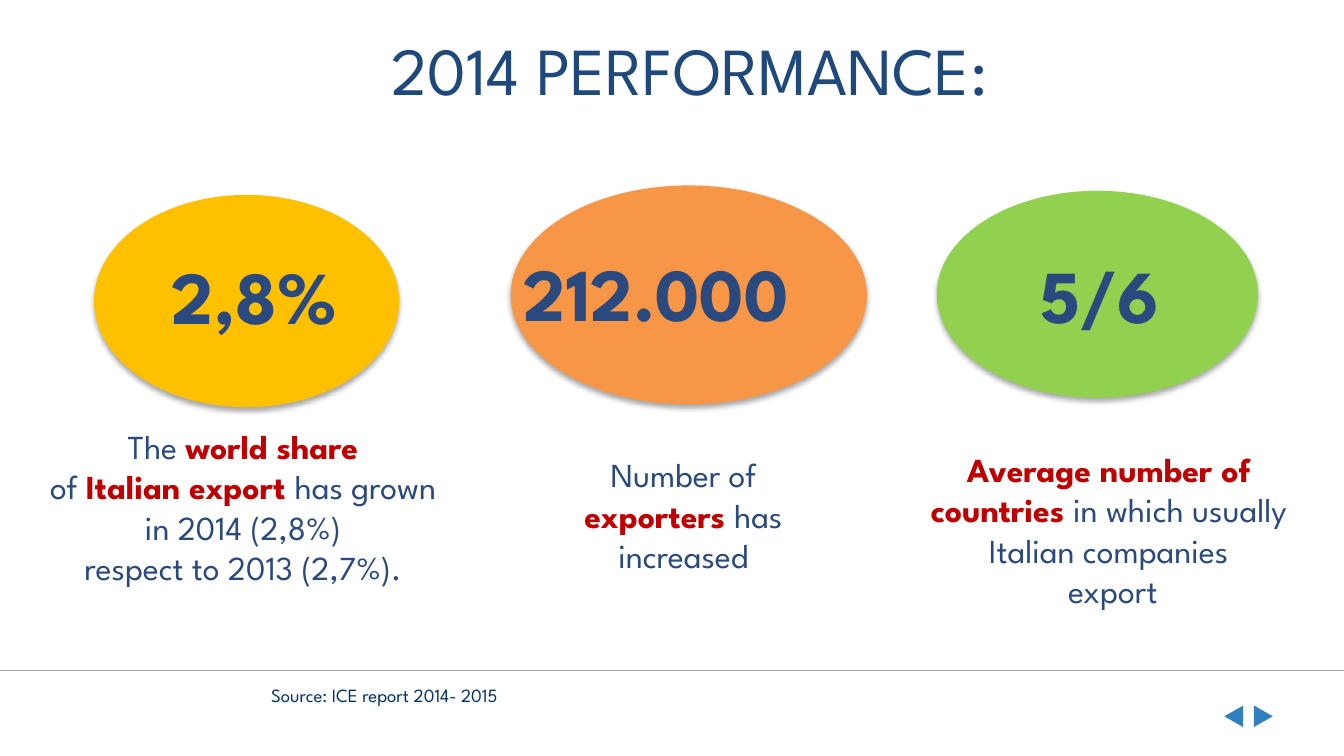
from lxml import etree
from pptx import Presentation
from pptx.dml.color import RGBColor
from pptx.enum import shapes, text
from pptx.oxml import ns
from pptx.util import Inches, Pt

FONT = "League Spartan"
NAVY = RGBColor(0x2A, 0x49, 0x7E)
TITLE = RGBColor(0x1F, 0x49, 0x7D)
DEEP = RGBColor(0x00, 0x33, 0x66)
RED = RGBColor(0xC0, 0x00, 0x00)
GOLD = RGBColor(0xFF, 0xC0, 0x00)
ORANGE = RGBColor(0xF7, 0x96, 0x46)
GREEN = RGBColor(0x92, 0xD0, 0x50)
BLUE = RGBColor(0x2E, 0x80, 0xBF)
GREY = RGBColor(0xA6, 0xA6, 0xA6)
LEFT, MID = text.PP_ALIGN.LEFT, text.PP_ALIGN.CENTER

# oval box, colour, figure, figure box, figure alignment, figure wrap
OVALS = [
    ((3.8, 1.38, 2.65, 1.63), ORANGE, "212.000", (3.8, 1.79, 2.72, 0.77), LEFT, True),
    ((6.97, 1.42, 2.39, 1.54), GREEN, "5/6 ", (7.63, 1.8, 1.25, 0.77), MID, False),
    ((0.7, 1.45, 2.27, 1.58), GOLD, "2,8%", (1.18, 1.81, 1.47, 0.77), LEFT, False),
]

# Caption box and paragraphs; each run is (words, is key phrase)
NOTES = [
    ((-0.08, 3.17, 3.84, 1.21), [
        [("The ", False), ("world share ", True)],
        [("of ", False), ("Italian export ", True), ("has grown ", False)],
        [("in 2014 (2,8%) ", False)],
        [("respect to 2013 (2,7%). ", False)],
    ]),
    ((4.06, 3.38, 2.05, 0.91), [
        [("Number of ", False), ("exporters ", True), ("has increased", False)],
    ]),
    ((6.88, 3.34, 2.74, 1.51), [
        [("Average number of countries ", True),
         ("in which usually Italian companies", False)],
        [(" export", False)],
    ]),
]


def place(box):
    return [Inches(n) for n in box]


def write(par, words, size, color, bold=False):
    run = par.add_run()
    run.text = words
    look = {"name": FONT, "size": Pt(size), "bold": bold}
    for key, val in look.items():
        setattr(run.font, key, val)
    run.font.color.rgb = color


def set_frame(frame, wrap=True, inset=None):
    look = {"word_wrap": wrap, "vertical_anchor": text.MSO_ANCHOR.TOP,
            "auto_size": text.MSO_AUTO_SIZE.SHAPE_TO_FIT_TEXT}
    if inset is not None:
        for side in ("left", "top", "right", "bottom"):
            look["margin_" + side] = Inches(inset)
    for key, val in look.items():
        setattr(frame, key, val)


def add_title(slide):
    title = slide.shapes.title
    title.left, title.top, title.width, title.height = place((0.78, 0.16, 8.7, 0.71))
    set_frame(title.text_frame)
    par = title.text_frame.paragraphs[0]
    par.alignment, par.line_spacing = MID, 1.0
    write(par, "2014 PERFORMANCE:", 36, TITLE)


def add_label(slide, box, words, size, color, align=LEFT, wrap=True, bold=False):
    frame = slide.shapes.add_textbox(*place(box)).text_frame
    set_frame(frame, wrap)
    par = frame.paragraphs[0]
    par.alignment = align
    write(par, words, size, color, bold)


def add_note(slide, box, pars):
    frame = slide.shapes.add_textbox(*place(box)).text_frame
    set_frame(frame, inset=0)
    for i, runs in enumerate(pars):
        par = frame.add_paragraph() if i else frame.paragraphs[0]
        par.alignment = MID
        for words, key in runs:
            write(par, words, 18, RED if key else NAVY, key)


def add_solid(slide, kind, box, color):
    shape = slide.shapes.add_shape(kind, *place(box))
    shape.shadow.inherit = False
    shape.fill.solid()
    shape.fill.fore_color.rgb = color
    shape.line.fill.background()
    return shape


def add_shadow(shape):
    """Cast a soft black shadow straight down."""
    effects = shape.element.spPr.find(ns.qn("a:effectLst"))
    outer = etree.SubElement(effects, ns.qn("a:outerShdw"), blurRad=str(Pt(3.1)),
                             dist=str(Pt(1.8)), dir="5400000", rotWithShape="0")
    black = etree.SubElement(outer, ns.qn("a:srgbClr"), val="000000")
    etree.SubElement(black, ns.qn("a:alpha"), val="35000")


def add_rule(slide, y):
    rule = slide.shapes.add_connector(shapes.MSO_CONNECTOR.STRAIGHT,
                                      *place((0, y, 10, y)))
    rule.line.color.rgb = GREY
    rule.line.width = Pt(0.75)
    etree.SubElement(rule.element.spPr, ns.qn("a:effectLst"))


def main():
    deck = Presentation()
    deck.slide_width = Inches(10)
    deck.slide_height = deck.slide_width * 9 // 16
    slide = deck.slides.add_slide(deck.slide_layouts[5])
    add_title(slide)
    add_rule(slide, 4.99)
    for box, color, *_ in OVALS:
        add_shadow(add_solid(slide, shapes.MSO_SHAPE.OVAL, box, color))
    for left, turn in ((9.1, 270), (9.32, 90)):
        arrow = add_solid(slide, shapes.MSO_SHAPE.ISOSCELES_TRIANGLE,
                          (left, 5.26, 0.16, 0.14), BLUE)
        arrow.rotation = turn
    for box, pars in NOTES:
        add_note(slide, box, pars)
    for _, _, words, box, align, wrap in OVALS:
        add_label(slide, box, words, 40, NAVY, align, wrap, True)
    add_label(slide, (1.92, 5.04, 2.16, 0.27), "Source: ICE report 2014- 2015",
              10, DEEP, wrap=False)
    deck.save("out.pptx")


if __name__ == "__main__":
    main()
